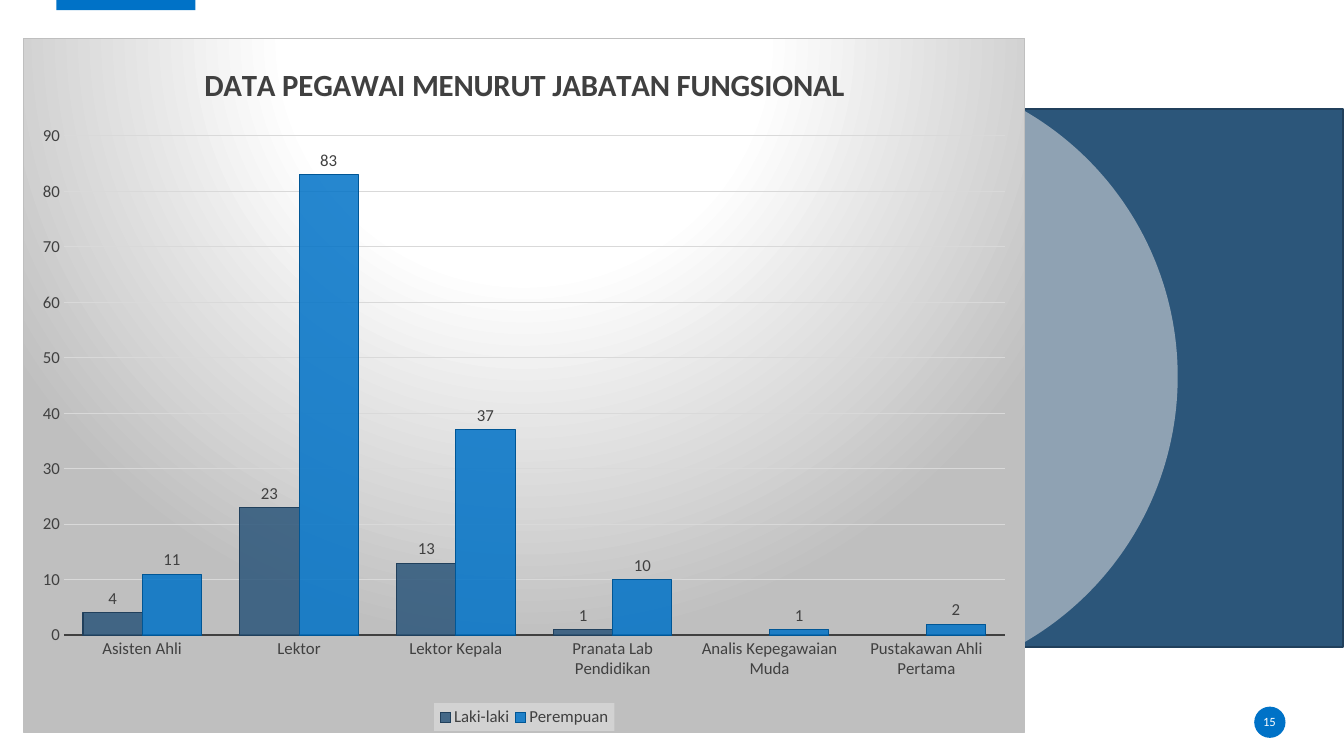
"""Build the slide with staff numbers by functional position and gender."""
from dataclasses import dataclass

from lxml.etree import SubElement
from pptx import Presentation
from pptx.chart.data import CategoryChartData
from pptx.dml.color import RGBColor
from pptx.enum.chart import XL_CHART_TYPE, XL_LABEL_POSITION, XL_LEGEND_POSITION, XL_TICK_MARK
from pptx.enum.shapes import MSO_SHAPE
from pptx.enum.text import MSO_ANCHOR, PP_ALIGN
from pptx.oxml import parse_xml
from pptx.oxml.ns import nsdecls, qn
from pptx.util import Inches, Pt

TITLE = "DATA PEGAWAI MENURUT JABATAN FUNGSIONAL"
PAGE = "15"
POSITIONS = ["Asisten Ahli", "Lektor", "Lektor Kepala", "Pranata Lab Pendidikan",
             "Analis Kepegawaian Muda", "Pustakawan Ahli Pertama"]


@dataclass(frozen=True)
class Theme:
    font: str = "Calibri"
    blue: str = "0072C7"
    blue_edge: str = "005695"
    navy: str = "2C567A"
    navy_edge: str = "21405C"
    pale: str = "E7E6E6"
    legend: str = "F2F2F2"
    white: str = "FFFFFF"
    ink: str = "404040"
    grid: str = "D9D9D9"
    grey: str = "BFBFBF"
    title_size: float = 22
    label_size: float = 12
    page_size: float = 9


T = Theme()
SERIES = [("Laki-laki", [4, 23, 13, 1, None, None], T.navy, T.navy_edge),
          ("Perempuan", [11, 83, 37, 10, 1, 2], T.blue, T.blue_edge)]

# Boxes are left, top, width and height in percent of the slide.
DECOR = [
    (MSO_SHAPE.RECTANGLE, (4.2, -0.27, 10.35, 1.6), T.blue, None, 100),
    (MSO_SHAPE.OVAL, (93.32, 93.47, 2.33, 4.13), T.blue, None, 100),
    (MSO_SHAPE.RECTANGLE, (64.44, 14.4, 35.48, 71.2), T.navy, T.navy_edge, 100),
    (MSO_SHAPE.OVAL, (41.94, 9.2, 45.69, 81.2), T.pale, None, 53),
]
PAGE_BOX = (93.25, 94.13, 2.4, 2.67)
CHART_BOX = (1.73, 5.07, 74.57, 91.87)
PLOT_AREA = (0.04, 0.14, 0.94, 0.72)
LEGEND_AREA = (0.41, 0.96, 0.18, 0.04)
STOPS = [(0, T.white), (39, T.white), (100, T.grey)]

prs = Presentation()
prs.slide_width, prs.slide_height = Inches(13.33), Inches(7.5)


def place(box):
    size = (prs.slide_width, prs.slide_height) * 2
    return [int(share * side / 100) for share, side in zip(box, size)]


def style_font(font, size, color=T.ink, bold=False):
    font.name, font.size, font.bold = T.font, Pt(size), bold
    font.color.rgb = RGBColor.from_string(color)


def paint(obj, fill, edge=None, width=1, alpha=100):
    obj.fill.solid()
    obj.fill.fore_color.rgb = RGBColor.from_string(fill)
    if edge:
        draw_line(obj.line, edge, width)
    else:
        obj.line.fill.background()
    return alpha


def draw_line(line, color, width):
    line.color.rgb = RGBColor.from_string(color)
    line.width = Pt(width)


def set_alpha(element, percent):
    if percent < 100:
        color = next(element.iter(qn("a:srgbClr")))
        SubElement(color, qn("a:alpha"), val=str(percent * 1000))


def add_text(s, text, box, size, color):
    tf = s.shapes.add_textbox(*place(box)).text_frame
    tf.margin_left = tf.margin_right = tf.margin_top = tf.margin_bottom = 0
    tf.word_wrap, tf.vertical_anchor = True, MSO_ANCHOR.MIDDLE
    p = tf.paragraphs[0]
    p.alignment = PP_ALIGN.CENTER
    r = p.add_run()
    r.text = text
    style_font(r.font, size, color)


def make_layout(area, inner=False):
    target = '<c:layoutTarget val="inner"/>' if inner else ""
    modes = "".join(f'<c:{k}Mode val="edge"/>' for k in "xy")
    sizes = "".join(f'<c:{k} val="{v}"/>' for k, v in zip("xywh", area))
    return parse_xml(f'<c:layout {nsdecls("c")}><c:manualLayout>{target}{modes}{sizes}'
                     '</c:manualLayout></c:layout>')


def set_layout(parent, layout, after=None):
    for old in parent.findall(qn("c:layout")):
        parent.remove(old)
    if after is None:
        parent.insert(0, layout)
    else:
        parent.find(qn(after)).addnext(layout)


def style_background(chart):
    stops = "".join(f'<a:gs pos="{pos * 1000}"><a:srgbClr val="{c}"/></a:gs>' for pos, c in STOPS)
    frame = parse_xml(
        f'<c:spPr {nsdecls("c", "a")}><a:gradFill><a:gsLst>{stops}</a:gsLst><a:path path="circle">'
        '<a:fillToRect l="50000" t="-80000" r="50000" b="180000"/></a:path></a:gradFill>'
        f'<a:ln w="{Pt(0.75)}"><a:solidFill><a:srgbClr val="{T.grey}"/></a:solidFill></a:ln></c:spPr>')
    chart.element.find(qn("c:chart")).addnext(frame)


def style_legend(chart):
    chart.has_legend = True
    legend = chart.legend
    legend.position, legend.include_in_layout = XL_LEGEND_POSITION.BOTTOM, False
    style_font(legend.font, T.label_size)
    element = chart.element.find(".//" + qn("c:legend"))
    set_layout(element, make_layout(LEGEND_AREA), after="c:legendPos")
    element.find(qn("c:overlay")).addnext(parse_xml(
        f'<c:spPr {nsdecls("c", "a")}><a:solidFill><a:srgbClr val="{T.legend}">'
        '<a:alpha val="39000"/></a:srgbClr></a:solidFill></c:spPr>'))


def style_axes(chart):
    for axis in (chart.category_axis, chart.value_axis):
        axis.major_tick_mark = axis.minor_tick_mark = XL_TICK_MARK.NONE
        style_font(axis.tick_labels.font, T.label_size)
    draw_line(chart.category_axis.format.line, T.ink, 1.5)
    values = chart.value_axis
    values.minimum_scale, values.maximum_scale, values.major_unit = 0, 90, 10
    values.format.line.fill.background()
    draw_line(values.major_gridlines.format.line, T.grid, 0.75)


def style_series(plot):
    plot.gap_width, plot.overlap, plot.vary_by_categories = 65, 0, False
    for series, (_, _, fill, edge) in zip(plot.series, SERIES):
        paint(series.format, fill, edge, 0.75)
        set_alpha(series.format.fill._xPr, 85)
        series.invert_if_negative = False
        labels = series.data_labels
        labels.show_value, labels.position = True, XL_LABEL_POSITION.OUTSIDE_END
        style_font(labels.font, T.label_size)


def add_staff_chart(s):
    data = CategoryChartData()
    data.categories = POSITIONS
    for name, values, _, _ in SERIES:
        data.add_series(name, values)
    chart = s.shapes.add_chart(XL_CHART_TYPE.COLUMN_CLUSTERED, *place(CHART_BOX), data).chart
    style_font(chart.font, T.label_size)
    chart.has_title = True
    p = chart.chart_title.text_frame.paragraphs[0]
    r = p.add_run()
    r.text = TITLE
    style_font(r.font, T.title_size, bold=True)
    chart.chart_title.include_in_layout = False
    style_axes(chart)
    style_series(chart.plots[0])
    style_legend(chart)
    style_background(chart)
    set_layout(chart.element.find(".//" + qn("c:plotArea")), make_layout(PLOT_AREA, inner=True))


def main():
    s = prs.slides.add_slide(prs.slide_layouts[6])
    for kind, box, fill, edge, alpha in DECOR:
        sp = s.shapes.add_shape(kind, *place(box))
        sp.shadow.inherit = False
        paint(sp, fill, edge)
        set_alpha(sp.element.spPr, alpha)
    add_text(s, PAGE, PAGE_BOX, size=T.page_size, color=T.white)
    add_staff_chart(s)
    prs.save("out.pptx")


if __name__ == "__main__":
    main()
